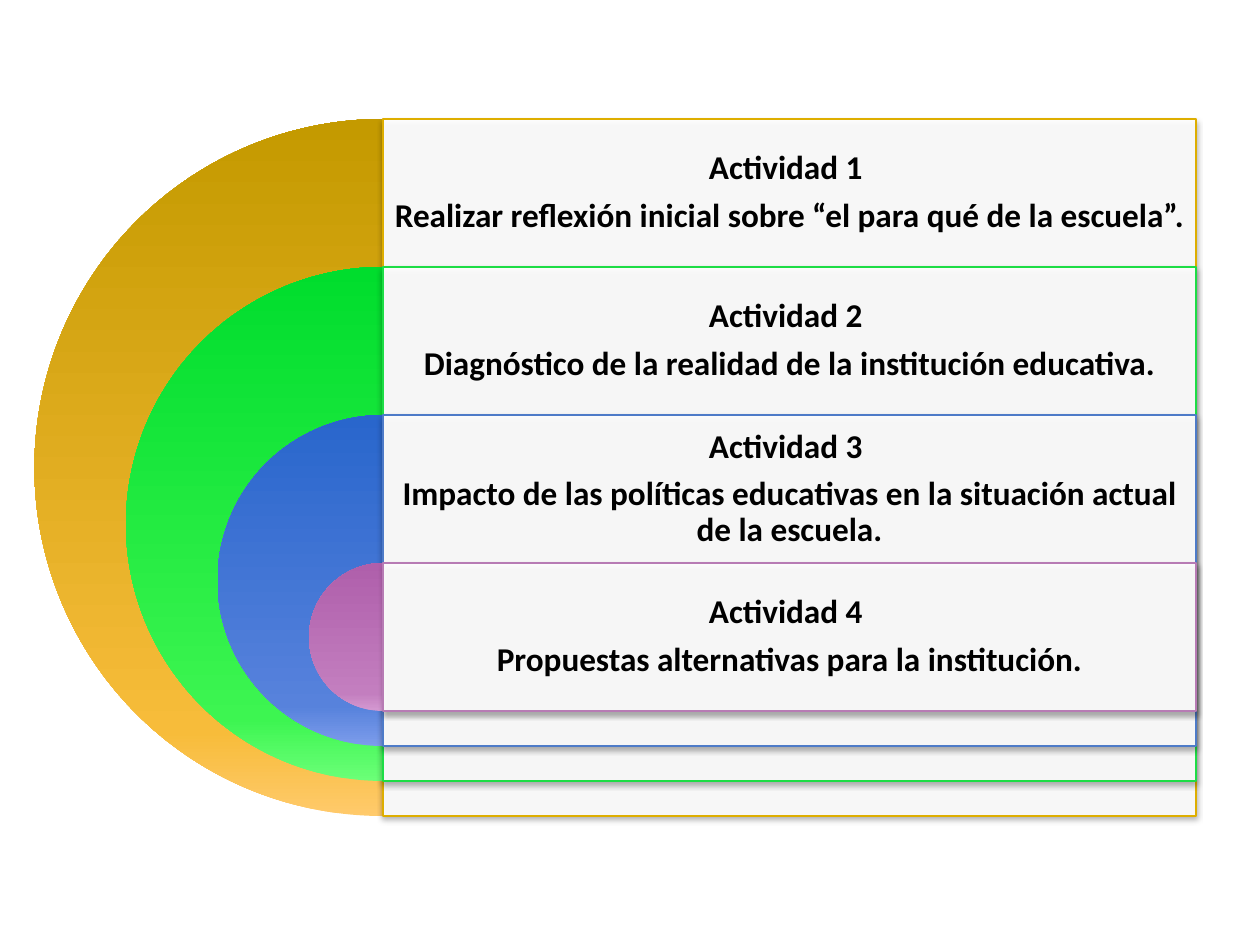
import copy
import lxml.etree
import pptx
import pptx.util
import pptx.dml.color
import pptx.enum.shapes
import pptx.enum.text
import pptx.oxml
import pptx.oxml.ns

SCALE = 914400 / 126
KIND = pptx.enum.shapes.MSO_SHAPE
qn = pptx.oxml.ns.qn
rgb = pptx.dml.color.RGBColor.from_string

COLORS = {
    "black": "000000",
    "white": "FFFFFF",
    "lines": ["DEAE00", "1DDD45", "4E7BC8", "B77BB4"],
    "grads": [
        ["FFCA6B", "F7BC3A", "C49A00"],
        ["6BFF78", "3DF551", "00DD2D"],
        ["7C9CEB", "5782DC", "2966CC"],
        ["D499D1", "C37EBF", "AF5FAB"],
    ],
}
STEPS = [
    "Realizar reflexión inicial sobre “el para qué de la escuela”.",
    "Diagnóstico de la realidad de la institución educativa.",
    "Impacto de las políticas educativas en la situación actual de la escuela.",
    "Propuestas alternativas para la institución.",
]
SHADOW = (
    f'<a:effectLst {pptx.oxml.ns.nsdecls("a")}>'
    '<a:outerShdw blurRad="39370" dist="22860" dir="5400000" rotWithShape="0">'
    f'<a:srgbClr val="{COLORS["black"]}"><a:alpha val="35000"/></a:srgbClr>'
    "</a:outerShdw></a:effectLst>"
)


def px(*vals):
    return [round(v * SCALE) for v in vals]


def write(para, text, size=19, bold=True, color="black", after=6.65):
    para.alignment = pptx.enum.text.PP_ALIGN.CENTER
    para.line_spacing = 0.9
    para.space_after = pptx.util.Pt(after)
    run = para.add_run()
    run.text = text
    run.font.name = "Calibri"
    run.font.size = pptx.util.Pt(size)
    run.font.bold = bold
    run.font.color.rgb = rgb(COLORS[color])


deck = pptx.Presentation()
deck.slide_width, deck.slide_height = px(1260, 945)
slide = deck.slides.add_slide(deck.slide_layouts[6])
shapes = slide.shapes

# Each ring starts one row lower and is smaller by a fixed amount
MID, TOP, WIDE, ROW = 383, 119, 813, 148
DIAM, SHRINK = 697, 183

for i, step in enumerate(STEPS):
    top = TOP + i * ROW
    diam = DIAM - i * SHRINK

    # Half disc with a vertical gradient
    disc = shapes.add_shape(KIND.PIE, *px(MID - diam / 2, top, diam, diam))
    disc.adjustments[0], disc.adjustments[1] = 54, 162
    disc.shadow.inherit = False
    disc.line.fill.background()
    disc.fill.gradient()
    disc.fill.gradient_angle = 90
    stops = disc.element.spPr.find(".//" + qn("a:gsLst"))
    stops.insert(1, copy.deepcopy(stops[0]))
    for stop, pos, hue in zip(disc.fill.gradient_stops, (0, 0.12, 1), COLORS["grads"][i]):
        stop.position = pos
        stop.color.rgb = rgb(hue)

    # Translucent panel with a soft shadow
    panel = shapes.add_shape(KIND.RECTANGLE, *px(MID, top, WIDE, diam))
    panel.fill.solid()
    panel.fill.fore_color.rgb = rgb(COLORS["white"])
    panel.line.color.rgb = rgb(COLORS["lines"][i])
    panel.line.width = pptx.util.Pt(0.75)
    props = panel.element.spPr
    tint = props.find(qn("a:solidFill"))[0]
    lxml.etree.SubElement(tint, qn("a:alpha"), val="90000")
    props.append(pptx.oxml.parse_xml(SHADOW))

    # Heading and activity
    box = shapes.add_textbox(*px(MID, top, WIDE, ROW))
    frame = box.text_frame
    frame.word_wrap = True
    frame.vertical_anchor = pptx.enum.text.MSO_ANCHOR.MIDDLE
    frame.margin_left, frame.margin_top, frame.margin_right, frame.margin_bottom = px(10, 10, 10, 10)
    write(frame.paragraphs[0], f"Actividad {i + 1} ")
    write(frame.add_paragraph(), step)

deck.save("out.pptx")
